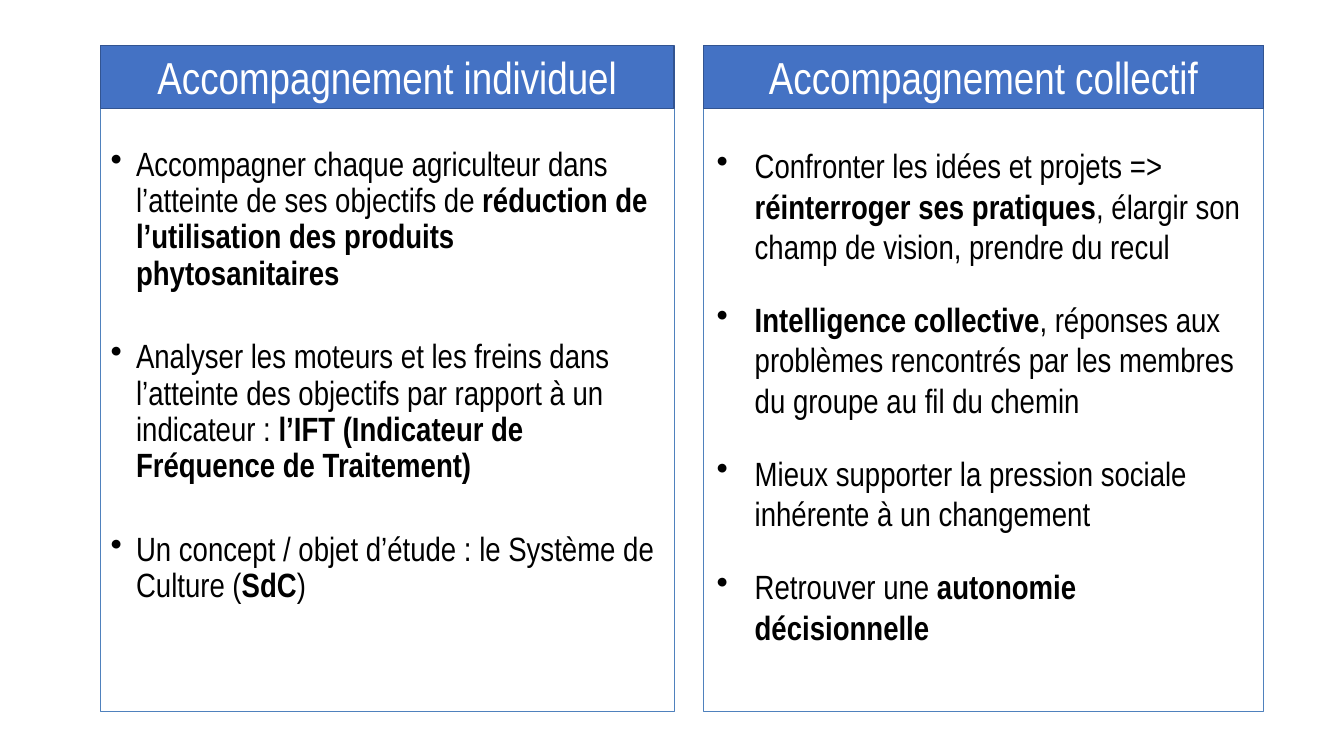
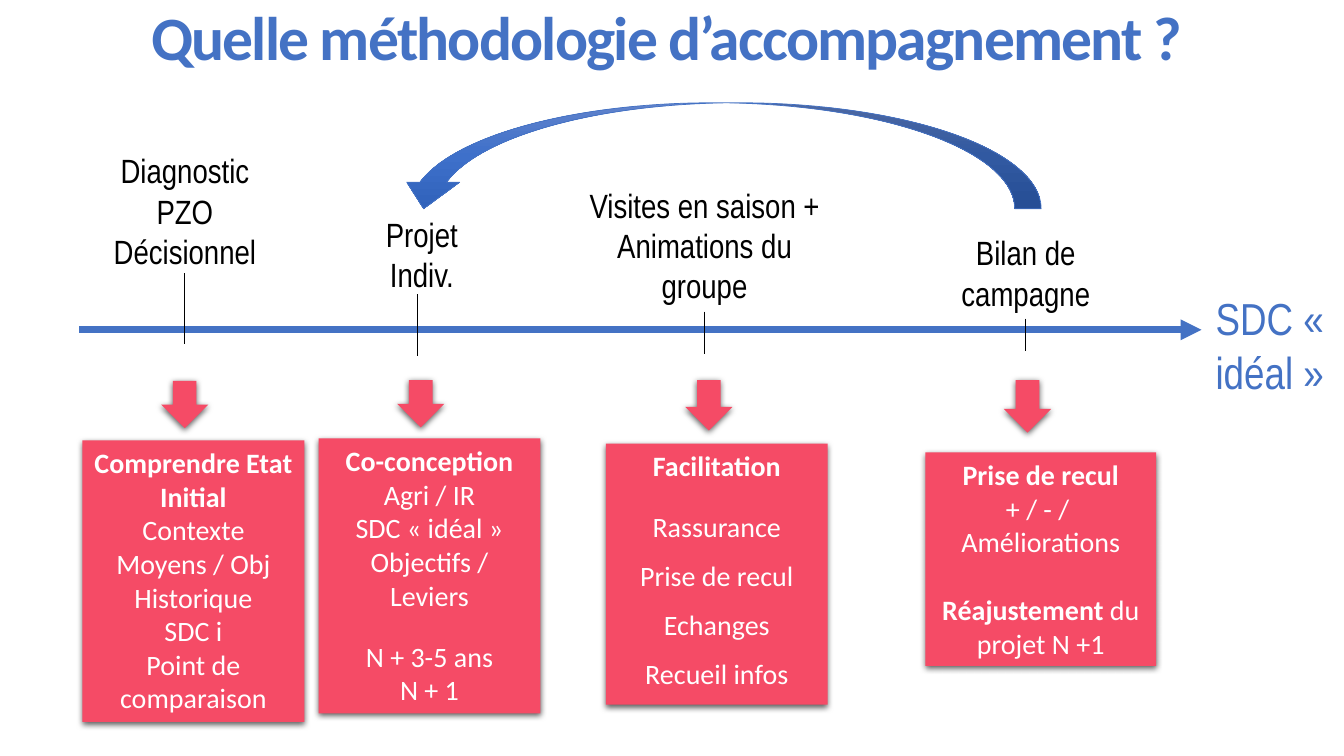
from copy import deepcopy
from dataclasses import dataclass

from lxml.etree import SubElement
from pptx import Presentation
from pptx.dml.color import RGBColor
from pptx.enum.shapes import MSO_CONNECTOR, MSO_SHAPE
from pptx.enum.text import MSO_ANCHOR, PP_ALIGN
from pptx.oxml.ns import qn
from pptx.util import Cm, Pt


@dataclass(frozen=True)
class Theme:
    blue: str = "4472C4"
    dark_blue: str = "325491"
    frame_blue: str = "4F81BD"
    red: str = "F54B66"
    black: str = "000000"
    white: str = "FFFFFF"
    gradient: tuple = ("6183CB", "3E70CA", "3062BB")
    narrow: str = "Arial Narrow"
    sans: str = "Calibri"
    title_size: int = 44
    heading_size: int = 32
    body_size: int = 24
    box_size: int = 20


theme = Theme()


def write(shape, paragraphs, size, font, color, align=PP_ALIGN.CENTER,
          anchor=MSO_ANCHOR.TOP, margins=(0.25, 0.13), spacing=None, hanging=0):
    """Write (space before, text) pairs; **...** marks bold, hanging adds bullets."""
    frame = shape.text_frame
    frame.word_wrap = True
    frame.vertical_anchor = anchor
    frame.margin_left = frame.margin_right = Cm(margins[0])
    frame.margin_top = frame.margin_bottom = Cm(margins[1])
    for index, (gap, text) in enumerate(paragraphs):
        paragraph = frame.add_paragraph() if index else frame.paragraphs[0]
        paragraph.alignment = align
        paragraph.space_before = Pt(gap)
        paragraph.line_spacing = spacing
        paragraph.font.size = Pt(size)
        paragraph.font.name = font
        paragraph.font.color.rgb = RGBColor.from_string(color)
        for part, piece in enumerate(text.split("**")):
            if piece:
                run = paragraph.add_run()
                run.text = piece
                run.font.bold = part % 2 == 1
        if hanging:
            properties = paragraph._p.get_or_add_pPr()
            properties.set("marL", str(Cm(hanging)))
            properties.set("indent", str(-Cm(hanging)))
            bullet = properties.makeelement(qn("a:buChar"), {"char": "•"})
            properties.find(qn("a:defRPr")).addprevious(bullet)


def draw(slide, kind, place, fill=None, line=None, width=0.75, shadow=False):
    """Add a preset shape, or a straight line when kind is a connector."""
    lengths = [Cm(value) for value in place]
    if isinstance(kind, MSO_CONNECTOR):
        shape = slide.shapes.add_connector(kind, *lengths)
        SubElement(shape._element.spPr, qn("a:effectLst"))
    else:
        shape = slide.shapes.add_shape(kind, *lengths)
        shape.shadow.inherit = False
        if fill:
            shape.fill.solid()
            shape.fill.fore_color.rgb = RGBColor.from_string(fill)
        else:
            shape.fill.background()
    if line:
        shape.line.color.rgb = RGBColor.from_string(line)
        shape.line.width = Pt(width)
    else:
        shape.line.fill.background()
    if shadow:
        effects = shape._element.spPr.find(qn("a:effectLst"))
        outer = SubElement(effects, qn("a:outerShdw"), blurRad=str(Pt(4.5)),
                           dist=str(Pt(1.5)), dir="5400000", rotWithShape="0")
        tint = SubElement(outer, qn("a:srgbClr"), val=theme.black)
        SubElement(tint, qn("a:alpha"), val="63000")
    return shape


presentation = Presentation()
presentation.slide_width = Cm(33.87)
presentation.slide_height = Cm(19.05)
blank = presentation.slide_layouts[6]

# Slide 1: two framed lists under blue headings
slide = presentation.slides.add_slide(blank)
heading_top, heading_height = 1.14, 1.6
frame_top, frame_height = 2.74, 15.19
columns = [
    ("Accompagnement individuel", 2.54, 14.45, 34,
     dict(margins=(0.25, 0.97), spacing=0.9, hanging=0.64), [
         "Accompagner chaque agriculteur dans l’atteinte de ses objectifs de "
         "**réduction de l’utilisation des produits phytosanitaires**",
         "Analyser les moteurs et les freins dans l’atteinte des objectifs par "
         "rapport à un indicateur : **l’IFT (Indicateur de Fréquence de Traitement)**",
         "Un concept / objet d’étude : le Système de Culture (**SdC**)",
     ]),
    ("Accompagnement collectif", 17.73, 14.12, 23.4,
     dict(margins=(0.33, 0.92), hanging=0.96), [
         "Confronter les idées et projets => **réinterroger ses pratiques**, "
         "élargir son champ de vision, prendre du recul",
         "**Intelligence collective**, réponses aux problèmes rencontrés par les "
         "membres du groupe au fil du chemin",
         "Mieux supporter la pression sociale inhérente à un changement",
         "Retrouver une **autonomie décisionnelle**",
     ]),
]
for heading, left, width, gap, layout, items in columns:
    frame = draw(slide, MSO_SHAPE.RECTANGLE, (left, frame_top, width, frame_height),
                 line=theme.frame_blue)
    write(frame, [(gap if index else 0, item) for index, item in enumerate(items)],
          theme.body_size, theme.narrow, theme.black, PP_ALIGN.LEFT, **layout)
    band = draw(slide, MSO_SHAPE.RECTANGLE, (left, heading_top, width, heading_height),
                theme.blue, theme.dark_blue, 1)
    write(band, [(0, heading)], theme.heading_size, theme.narrow, theme.white,
          anchor=MSO_ANCHOR.MIDDLE, margins=(0.33, 0.18))

# Slide 2: title
slide = presentation.slides.add_slide(blank)
title = slide.shapes.add_textbox(Cm(0.66), Cm(0), Cm(32.28), Cm(2.06))
write(title, [(0, "**Quelle méthodologie d’accompagnement ?**")], theme.title_size,
      theme.sans, theme.blue, anchor=MSO_ANCHOR.MIDDLE, margins=(0.33, 0.18), spacing=0.9)
title.text_frame.paragraphs[0].runs[0]._r.get_or_add_rPr().set("spc", "-130")

# Time axis
axis = draw(slide, MSO_CONNECTOR.STRAIGHT, (2, 8.31, 30.28, 8.31), line=theme.blue, width=5)
SubElement(axis._element.spPr.find(qn("a:ln")), qn("a:tailEnd"), type="triangle")

# Steps: tick (x, top, bottom), label place and lines, arrow place, box place and lines
steps = [
    ((4.65, 6.88, 8.66), (2.26, 3.66, 4.8, 3.33), ["Diagnostic", "PZO", "Décisionnel"],
     (4.06, 9.6, 1.19, 1.19), (2.08, 11.1, 5.59, 7.09),
     [(0, "**Comprendre Etat Initial**"), (0, "Contexte"), (0, "Moyens / Obj"),
      (0, "Historique"), (0, "SDC i"), (0, "Point de comparaison")]),
    ((10.52, 7.42, 8.97), (9.17, 5.26, 2.92, 2.31), ["Projet Indiv."],
     (10.01, 9.58, 1.19, 1.19), (8.03, 11.05, 5.59, 6.93),
     [(0, "**Co-conception** Agri / IR"), (0, "SDC « idéal »"),
      (0, "Objectifs / Leviers"), (19.5, "N + 3-5 ans"), (0, "N + 1")]),
    ((17.75, 7.85, 8.92), (14.48, 4.52, 6.55, 3.33),
     ["Visites en saison +", "Animations du groupe"],
     (17.27, 9.58, 1.19, 1.27), (15.27, 11.18, 5.59, 6.58),
     [(0, "**Facilitation**"), (19.5, "Rassurance"), (11, "Prise de recul"),
      (11, "Echanges"), (11, "Recueil infos")]),
    ((25.83, 8.03, 8.84), (23.5, 5.72, 4.7, 2.31), ["Bilan de campagne"],
     (25.3, 9.58, 1.19, 1.32), (23.32, 11.4, 5.82, 5.38),
     [(0, "**Prise de recul**"), (0, "+ / - / "), (0, "Améliorations"),
      (24.4, "**Réajustement** du projet N +1")]),
]
for (x, top, bottom), label_place, label_lines, arrow_place, box_place, box_lines in steps:
    draw(slide, MSO_CONNECTOR.STRAIGHT, (x, top, x, bottom), line=theme.black, width=0.5)
    label = slide.shapes.add_textbox(*[Cm(value) for value in label_place])
    write(label, [(0, text) for text in label_lines],
          theme.body_size, theme.narrow, theme.black)
    draw(slide, MSO_SHAPE.DOWN_ARROW, arrow_place, theme.red, shadow=True)
    box = draw(slide, MSO_SHAPE.RECTANGLE, box_place, theme.red, shadow=True)
    write(box, box_lines, theme.box_size, theme.sans, theme.white)

# Return arrow from the last step to the second
loop = draw(slide, MSO_SHAPE.CURVED_DOWN_ARROW, (10.01, 2.59, 16.23, 2.67),
            line=theme.blue, width=0.5)
loop._element.spPr.find(qn("a:xfrm")).set("flipH", "1")
loop.fill.gradient()
loop.fill.gradient_angle = 270
stop_list = next(loop._element.spPr.iter(qn("a:gsLst")))
stop_list.insert(1, deepcopy(stop_list[0]))
for index, stop in enumerate(loop.fill.gradient_stops):
    stop.position = index / 2
    stop.color.rgb = RGBColor.from_string(theme.gradient[index])

# Goal at the end of the axis
goal = slide.shapes.add_textbox(Cm(29.74), Cm(7.14), Cm(4.52), Cm(3.07))
write(goal, [(0, "SDC « idéal »")], theme.heading_size, theme.narrow, theme.blue,
      margins=(0.33, 0.18))

presentation.save("out.pptx")
